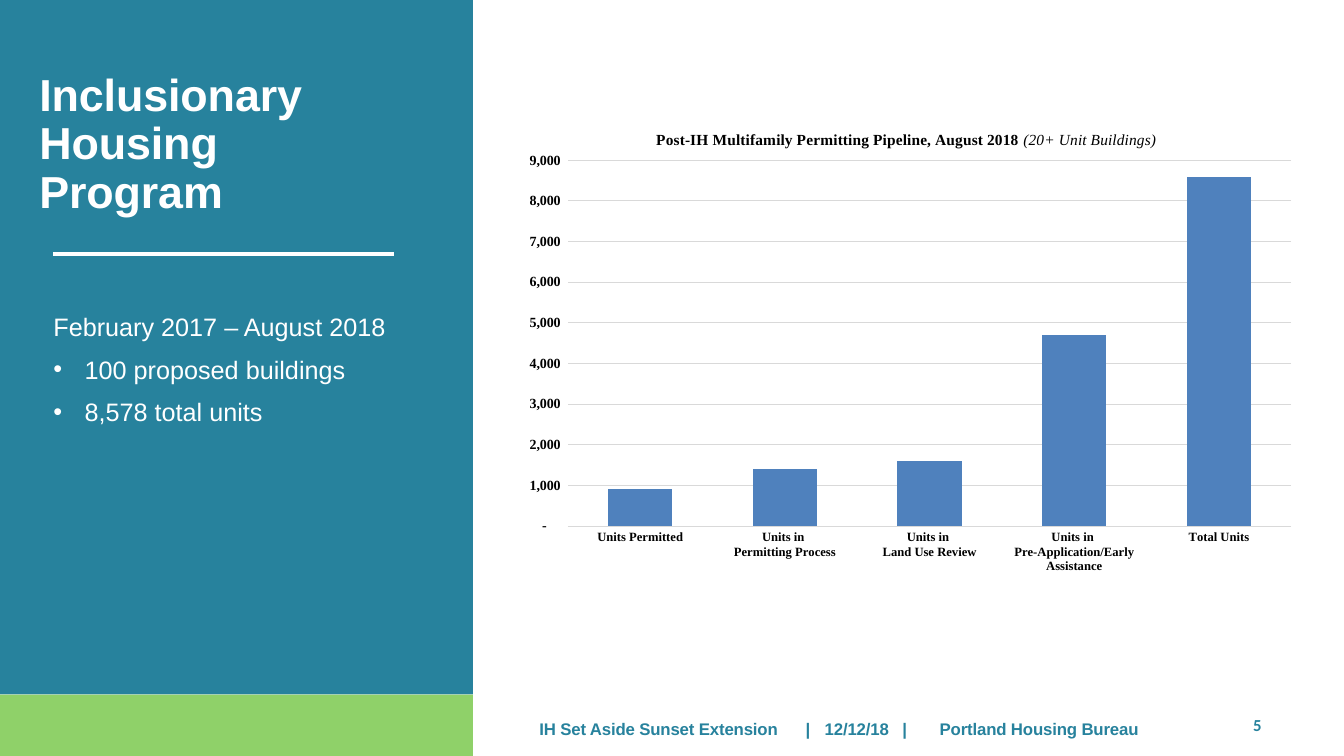
from lxml import etree
from pptx import Presentation
from pptx.chart.data import CategoryChartData
from pptx.dml.color import RGBColor
from pptx.enum.chart import XL_CHART_TYPE, XL_TICK_MARK
from pptx.enum.shapes import MSO_CONNECTOR, MSO_SHAPE
from pptx.oxml import parse_xml
from pptx.oxml.ns import nsdecls, qn
from pptx.util import Pt

COLUMNS = XL_CHART_TYPE.COLUMN_CLUSTERED
NO_TICK = XL_TICK_MARK.NONE
STRAIGHT = MSO_CONNECTOR.STRAIGHT
RECTANGLE = MSO_SHAPE.RECTANGLE

PX = 9144  # EMU per px, 100 px to the inch
COUNT_FORMAT = '_(* #,##0_);_(* \\(#,##0\\);_(* "-"??_);_(@_)'


def rgb(color):
    return RGBColor.from_string(color)


def style_font(font, size, color, family, bold=False, italic=False):
    font.size, font.name = Pt(size), family
    font.bold, font.italic = bold, italic
    font.color.rgb = rgb(color)


def style_line(line, color, width):
    line.color.rgb = rgb(color)
    line.width = Pt(width)


def manual_layout(x, y, w=None, h=None):
    """Return a c:layout in fractions of the chart; a size marks the inner plot."""
    target = '<c:layoutTarget val="inner"/>' if w else ""
    size = f'<c:w val="{w}"/><c:h val="{h}"/>' if w else ""
    return parse_xml(
        f'<c:layout {nsdecls("c")}><c:manualLayout>{target}'
        '<c:xMode val="edge"/><c:yMode val="edge"/>'
        f'<c:x val="{x}"/><c:y val="{y}"/>{size}</c:manualLayout></c:layout>')


class Deck:
    TEAL, GREEN, WHITE, BLACK = "27829D", "8FD169", "FFFFFF", "000000"
    GRID, BAR = "D9D9D9", "4F81BD"
    SANS, NUMBER, SERIF = "Arial", "Calibri", "Times New Roman"

    def __init__(self, width, height):
        self.prs = Presentation()
        self.prs.slide_width, self.prs.slide_height = width * PX, height * PX
        self.slide = self.prs.slides.add_slide(self.prs.slide_layouts[6])

    def band(self, x, y, w, h, color):
        band = self.slide.shapes.add_shape(RECTANGLE, x * PX, y * PX, w * PX, h * PX)
        band.shadow.inherit = False
        band.fill.solid()
        band.fill.fore_color.rgb = rgb(color)
        band.line.fill.background()

    def rule(self, x1, y1, x2, y2, color, width):
        rule = self.slide.shapes.add_connector(
            STRAIGHT, x1 * PX, y1 * PX, x2 * PX, y2 * PX)
        style_line(rule.line, color, width)
        etree.SubElement(rule._element.spPr, qn("a:effectLst"))

    def text_box(self, x, y, w, h, top=0):
        frame = self.slide.shapes.add_textbox(x * PX, y * PX, w * PX, h * PX).text_frame
        frame.word_wrap = True
        frame.margin_left = frame.margin_right = frame.margin_bottom = 0
        frame.margin_top = top * PX
        return frame

    def paragraph(self, frame, before=0, leading=None, indent=0, bullet=None, tabs=()):
        """Return the frame's first paragraph while unused, else a new one."""
        paragraph = frame.paragraphs[0]
        if paragraph.runs:
            paragraph = frame.add_paragraph()
        paragraph.space_before = Pt(before)
        if leading:
            paragraph.line_spacing = Pt(leading)
        props = paragraph._p.get_or_add_pPr()
        props.set("marL", str(indent * PX))
        if bullet:
            props.set("indent", str(-indent * PX))
            etree.SubElement(props, qn("a:buFont"), typeface=self.SANS)
            etree.SubElement(props, qn("a:buChar"), char=bullet)
        if tabs:
            stops = etree.SubElement(props, qn("a:tabLst"))
            for stop in tabs:
                etree.SubElement(stops, qn("a:tab"), pos=str(stop * PX), algn="l")
        return paragraph

    def run(self, paragraph, text, size, color, family=SANS, bold=False,
            italic=False, tracking=0):
        run = paragraph.add_run()
        run.text = text
        style_font(run.font, size, color, family, bold, italic)
        if tracking:
            run.font._element.set("spc", str(tracking))

    def column_chart(self, x, y, w, h, title_runs, counts, top, step):
        data = CategoryChartData()
        data.categories = list(counts)
        data.add_series("Series 1", list(counts.values()))
        chart = self.slide.shapes.add_chart(
            COLUMNS, x * PX, y * PX, w * PX, h * PX, data).chart
        style_font(chart.font, 10, self.BLACK, self.SERIF)
        chart.has_legend = False

        title = chart.chart_title
        heading = title.text_frame.paragraphs[0]
        for text, bold, italic in title_runs:
            self.run(heading, text, 11, self.BLACK, self.SERIF, bold, italic)
        title.include_in_layout = False
        title._element.tx.addnext(manual_layout(0.18, 0.04))

        plot_area = chart._chartSpace.chart.plotArea
        for layout in plot_area.findall(qn("c:layout")):
            plot_area.remove(layout)
        plot_area.insert(0, manual_layout(0.076, 0.103, 0.906, 0.777))

        plot = chart.plots[0]
        plot.vary_by_categories = False
        plot.gap_width = 125
        fill = plot.series[0].format.fill
        fill.solid()
        fill.fore_color.rgb = rgb(self.BAR)

        categories, values = chart.category_axis, chart.value_axis
        for axis, size in ((categories, 9), (values, 10)):
            axis.major_tick_mark = axis.minor_tick_mark = NO_TICK
            style_font(axis.tick_labels.font, size, self.BLACK, self.SERIF, True)
        style_line(categories.format.line, self.GRID, 0.75)
        values.format.line.fill.background()
        values.minimum_scale, values.maximum_scale = 0, top
        values.major_unit = step
        values.has_major_gridlines = True
        style_line(values.major_gridlines.format.line, self.GRID, 0.75)
        values.tick_labels.number_format = COUNT_FORMAT
        values.tick_labels.number_format_is_linked = False


def main():
    deck = Deck(1333, 750)
    deck.band(0, 0, 469, 689, deck.TEAL)
    deck.band(0, 689, 469, 61, deck.GREEN)
    deck.rule(53, 252, 391, 252, deck.WHITE, 2.58)

    summary = deck.text_box(53, 297, 338, 128, top=12)
    period = deck.paragraph(summary, before=8.7)
    deck.run(period, "February 2017 – August 2018", 18, deck.WHITE)
    for fact in ("100 proposed buildings", "8,578 total units"):
        item = deck.paragraph(summary, before=8.7, indent=31, bullet="•")
        deck.run(item, fact, 18, deck.WHITE)

    page = deck.paragraph(deck.text_box(1240, 708, 14, 21, top=1), 0.4, indent=3)
    deck.run(page, "5", 12, deck.TEAL, deck.NUMBER, bold=True)

    title = deck.paragraph(deck.text_box(39, 64, 361, 155, top=7), 5.2, leading=34.7)
    deck.run(title, "Inclusionary Housing", 32, deck.WHITE, bold=True, tracking=-10)
    title.add_line_break()
    deck.run(title, "Program", 32, deck.WHITE, bold=True, tracking=-10)

    footer = deck.paragraph(deck.text_box(534, 713, 660, 20), leading=14.2,
                            indent=1, tabs=(264, 283, 360, 397))
    for text, tracking in (("IH Set Aside Sunset Extension\t", -10), ("|\t", 0),
                           ("12/12/18\t", -10), ("|\t", 0),
                           ("Portland Housing Bureau", -10)):
        deck.run(footer, text, 12, deck.TEAL, bold=True, tracking=tracking)

    pipeline = {
        "Units Permitted": 900,
        "Units in \nPermitting Process": 1400,
        "Units in \nLand Use Review": 1600,
        "Units in \nPre-Application/Early Assistance": 4700,
        "Total Units": 8600,
    }
    title_runs = (("Post-IH Multifamily Permitting Pipeline, August 2018 ", True, False),
                  ("(20+ Unit Buildings)", False, True))
    deck.column_chart(503, 111, 792, 467, title_runs, pipeline, top=9000, step=1000)
    deck.prs.save("out.pptx")


if __name__ == "__main__":
    main()
